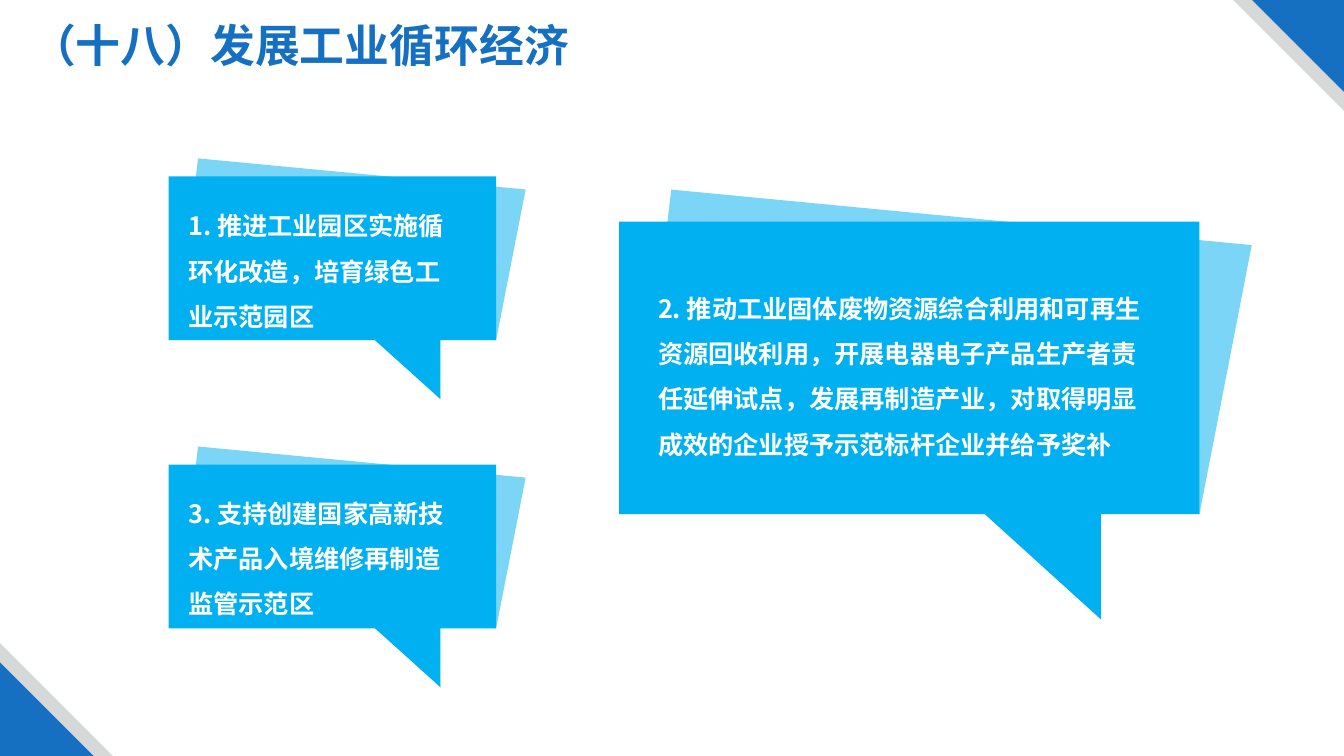
import dataclasses

import lxml.etree
import pptx
import pptx.dml.color
import pptx.enum.shapes
import pptx.enum.text
import pptx.oxml.ns
import pptx.presentation
import pptx.shapes.autoshape
import pptx.slide
import pptx.util

# The slide is a grid of 160 columns by 90 rows
COLUMNS, ROWS = 160, 90
CELL = pptx.util.Inches(7.5) / ROWS


@dataclasses.dataclass(frozen=True)
class Theme:
    blue: str = "1570C1"
    gray: str = "D7D8D8"
    sky: str = "00B0F0"
    white: str = "FFFFFF"
    font: str = "Noto Sans CJK SC"
    title_size: int = 32
    body_size: int = 18
    body_spacing: float = 1.5
    shade_opacity: int = 52


@dataclasses.dataclass(frozen=True)
class Area:
    column: float
    row: float
    columns: float
    rows: float

    def emu(self) -> list[pptx.util.Emu]:
        return [cells(n) for n in (self.column, self.row, self.columns, self.rows)]


@dataclasses.dataclass(frozen=True)
class Corner:
    size: float
    color: str
    at_top_right: bool


@dataclasses.dataclass(frozen=True)
class Bubble:
    body: Area
    caption: Area
    wording: str


THEME = Theme()

# Outlines as shares of the bubble body's width and height
FRONT = [(1, 0), (0, 0), (0, 1), (0.63, 1), (0.83, 1.36), (0.83, 1), (1, 1)]
SHADE = [(1.09, 0.08), (0.09, -0.11), (0.03, 0.89), (0.66, 0.98),
         (0.83, 1.36), (0.81, 0.99), (1, 1)]

CORNERS = [
    Corner(13.2, THEME.gray, True),
    Corner(10.95, THEME.blue, True),
    Corner(13.45, THEME.gray, False),
    Corner(11.15, THEME.blue, False),
]

BUBBLES = [
    Bubble(Area(20.07, 21, 39, 19.5), Area(21.24, 22.68, 35, 17.4),
           "1. 推进工业园区实施循环化改造，培育绿色工业示范园区"),
    Bubble(Area(73.7, 26.4, 69.1, 34.8), Area(77.16, 32.5, 62.3, 22.8),
           "2. 推动工业固体废物资源综合利用和可再生资源回收利用，开展电器电子产品"
           "生产者责任延伸试点，发展再制造产业，对取得明显成效的企业授予示范标杆企业并给予奖补"),
    Bubble(Area(20.07, 55.3, 39, 19.5), Area(21.24, 56.88, 35, 17.4),
           "3. 支持创建国家高新技术产品入境维修再制造监管示范区"),
]


def cells(count: float) -> pptx.util.Emu:
    return pptx.util.Emu(round(count * CELL))


def paint(shape: pptx.shapes.autoshape.Shape, color: str, opacity: int = 100) -> None:
    shape.shadow.inherit = False
    shape.line.fill.background()
    shape.fill.solid()
    shape.fill.fore_color.rgb = pptx.dml.color.RGBColor.from_string(color)
    if opacity < 100:
        qn = pptx.oxml.ns.qn
        tint = next(shape.element.iter(qn("a:srgbClr")))
        lxml.etree.SubElement(tint, qn("a:alpha"), val=str(opacity * 1000))


def draw_corner(slide: pptx.slide.Slide, corner: Corner) -> None:
    size = corner.size
    area = (Area(COLUMNS - size, 0, size, size) if corner.at_top_right
            else Area(0, ROWS - size, size, size))
    triangle = slide.shapes.add_shape(
        pptx.enum.shapes.MSO_SHAPE.RIGHT_TRIANGLE, *area.emu())
    triangle.rotation = 180 if corner.at_top_right else 0
    paint(triangle, corner.color)


def draw_outline(slide: pptx.slide.Slide, body: Area,
                 shares: list[tuple[float, float]], opacity: int = 100) -> None:
    corners = [(cells(body.column + x * body.columns), cells(body.row + y * body.rows))
               for x, y in shares]
    builder = slide.shapes.build_freeform(*corners[0])
    builder.add_line_segments(corners[1:], close=True)
    paint(builder.convert_to_shape(), THEME.sky, opacity)


def write(slide: pptx.slide.Slide, area: Area, wording: str, size: int, color: str,
          spacing: float = 1.0, centered: bool = False) -> None:
    frame = slide.shapes.add_textbox(*area.emu()).text_frame
    frame.word_wrap = True
    paragraph = frame.paragraphs[0]
    paragraph.line_spacing = spacing
    if centered:
        paragraph.alignment = pptx.enum.text.PP_ALIGN.CENTER
    run = paragraph.add_run()
    run.text = wording
    run.font.size = pptx.util.Pt(size)
    run.font.bold = True
    run.font.color.rgb = pptx.dml.color.RGBColor.from_string(color)
    run.font.name = THEME.font
    # Chinese glyphs take the East Asian typeface
    lxml.etree.SubElement(run.font._element, pptx.oxml.ns.qn("a:ea"), typeface=THEME.font)


def main() -> None:
    deck: pptx.presentation.Presentation = pptx.Presentation()
    deck.slide_width, deck.slide_height = cells(COLUMNS), cells(ROWS)
    slide = deck.slides.add_slide(deck.slide_layouts[6])

    # Corner decoration
    for corner in CORNERS:
        draw_corner(slide, corner)

    # Title
    write(slide, Area(0.24, 1.56, 71, 8), "（十八）发展工业循环经济",
          THEME.title_size, THEME.blue, centered=True)

    # Speech bubbles with a pale tilted shade behind each
    for bubble in BUBBLES:
        draw_outline(slide, bubble.body, SHADE, THEME.shade_opacity)
        draw_outline(slide, bubble.body, FRONT)
        write(slide, bubble.caption, bubble.wording, THEME.body_size, THEME.white,
              spacing=THEME.body_spacing)

    deck.save("out.pptx")


if __name__ == "__main__":
    main()
